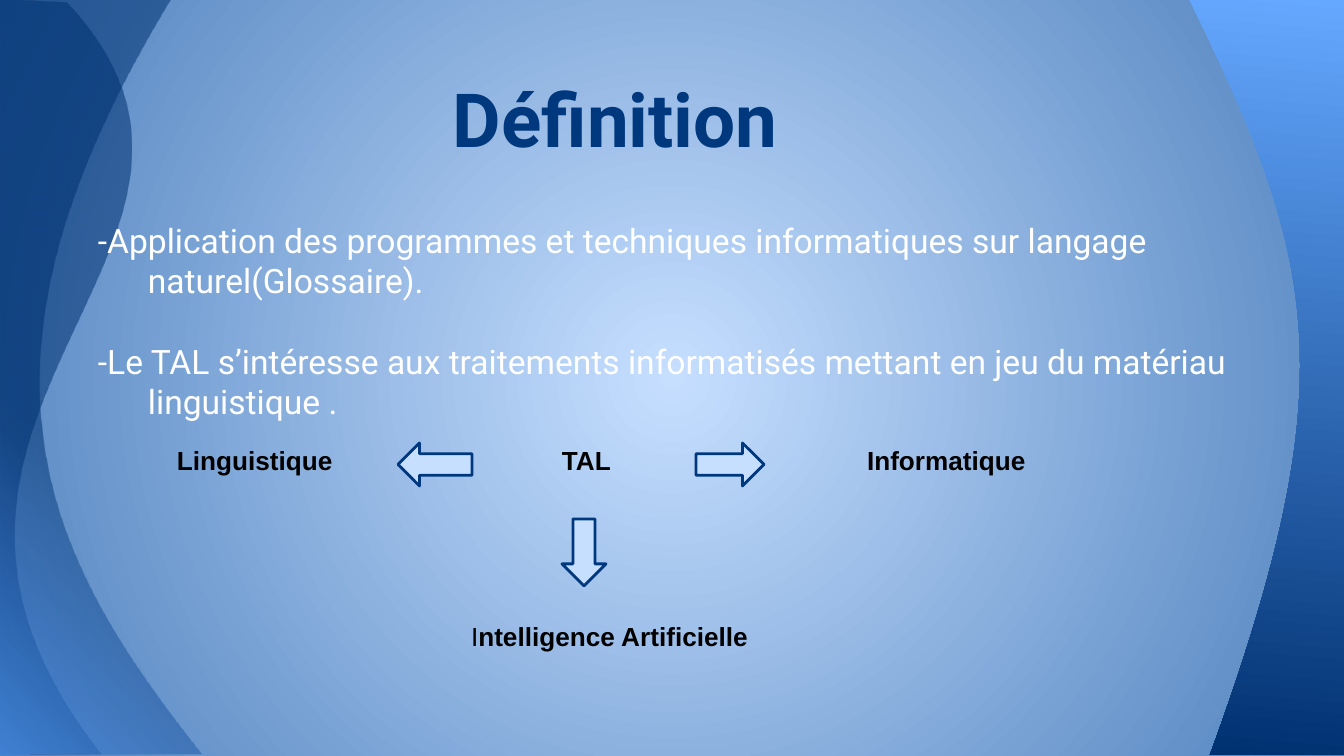
from lxml.etree import SubElement
from pptx import Presentation
from pptx.dml.color import RGBColor
from pptx.enum.shapes import MSO_SHAPE
from pptx.enum.text import MSO_ANCHOR
from pptx.oxml.ns import qn
from pptx.util import Pt

PX = 914400 / 134.4
WIDTH, HEIGHT = 1344, 756
INSET = 13
NAVY, PALE, WHITE, BLACK = "00387E", "C6DFFF", "FFFFFF", "000000"

TITLE = "Définition"
DEFINITIONS = [
    "-Application des programmes et techniques informatiques sur langage naturel(Glossaire).",
    "-Le TAL s’intéresse aux traitements informatisés mettant en jeu du matériau linguistique .",
]
# (runs as (text, bold), box, indent)
LABELS = [
    ([("Linguistique", True)], (164, 431, 204, 67), 0),
    ([("Informatique", True)], (854, 431, 204, 67), 0),
    ([("TAL", True)], (542, 431, 109, 67), 7),
    ([("I", False), ("ntelligence Artificielle", True)], (458, 607, 364, 67), 0),
]
ARROWS = [
    (MSO_SHAPE.LEFT_ARROW, (398, 443, 74, 43)),
    (MSO_SHAPE.DOWN_ARROW, (562, 519, 44, 67)),
    (MSO_SHAPE.RIGHT_ARROW, (696, 443, 68, 43)),
]
BACKGROUND = dict(stops=[(0, PALE), (100, "4F81BD")], focus=(50, 50, 50, 50))
VEIL = dict(stops=[(0, "549FFF"), (41, "003171"), (100, "003171")],
            focus=(0, 100, 100, 0), opacity=54)
EDGE = dict(stops=[(0, "65A8FF"), (100, "003171")], angle=95)
# (Bézier curve, outer corners, gradient)
WAVES = [
    ([(171, 0), (-51, 366), (44, 555), (202, 754)], [(-1, 755), (-1, -3)], VEIL),
    ([(67, 3), (292, 245), (-164, 414), (101, 754)], [(1, 755), (1, 0)], VEIL),
    ([(1210, 755), (1346, 382), (1319, 263), (1189, -1)], [(1351, -1), (1351, 755)], EDGE),
]


def px(length):
    return round(length * PX)


def color(hex_code):
    return RGBColor.from_string(hex_code)


def set_gradient(fill, properties, stops, focus=None, angle=0, opacity=100):
    """Fill with a circle around focus (left, top, right, bottom in %), else a line at angle."""
    fill.solid()
    solid = properties.find(qn("a:solidFill"))
    gradient = properties.makeelement(qn("a:gradFill"), {"rotWithShape": "1"})
    properties.replace(solid, gradient)
    stop_list = SubElement(gradient, qn("a:gsLst"))
    for position, hex_code in stops:
        stop = SubElement(stop_list, qn("a:gs"), pos=str(position * 1000))
        tint = SubElement(stop, qn("a:srgbClr"), val=hex_code)
        if opacity < 100:
            SubElement(tint, qn("a:alpha"), val=str(opacity * 1000))
    if focus:
        circle = SubElement(gradient, qn("a:path"), path="circle")
        sides = {side: str(value * 1000) for side, value in zip("ltrb", focus)}
        SubElement(circle, qn("a:fillToRect"), sides)
    else:
        SubElement(gradient, qn("a:lin"), ang=str(angle * 60000), scaled="0")


def bend_first_side(outline):
    """Turn the first three lines of a freeform into one Bézier curve."""
    lines = list(outline.iter(qn("a:lnTo")))[:3]
    bend = outline.makeelement(qn("a:cubicBezTo"), {})
    lines[0].addprevious(bend)
    for line in lines:
        bend.append(line[0])
        line.getparent().remove(line)


def add_wave(slide, curve, corners, gradient):
    start, *rest = curve + corners
    builder = slide.shapes.build_freeform(*start, scale=PX)
    builder.add_line_segments(rest, close=True)
    wave = builder.convert_to_shape()
    bend_first_side(wave._element.spPr)
    wave.shadow.inherit = False
    wave.line.fill.background()
    set_gradient(wave.fill, wave._element.spPr, **gradient)


def add_text(slide, paragraphs, box, *, size, font, hex_code, margin=0, indent=0,
             gap=0, top_inset=INSET, anchor=MSO_ANCHOR.TOP):
    """Add a text box; each paragraph is a list of (text, bold) runs."""
    frame = slide.shapes.add_textbox(*map(px, box)).text_frame
    frame.word_wrap = True
    frame.vertical_anchor = anchor
    frame.margin_left = frame.margin_right = frame.margin_bottom = px(INSET)
    frame.margin_top = px(top_inset)
    for index, runs in enumerate(paragraphs):
        paragraph = frame.paragraphs[0] if index == 0 else frame.add_paragraph()
        paragraph.space_before = Pt(gap if index else 0)
        properties = paragraph._p.get_or_add_pPr()
        properties.set("marL", str(px(margin)))
        properties.set("indent", str(px(indent)))
        for text, bold in runs:
            run = paragraph.add_run()
            run.text = text
            run.font.size, run.font.name, run.font.bold = Pt(size), font, bold
            run.font.color.rgb = color(hex_code)


def add_arrow(slide, kind, box):
    arrow = slide.shapes.add_shape(kind, *map(px, box))
    arrow.shadow.inherit = False
    arrow.fill.solid()
    arrow.fill.fore_color.rgb = color(PALE)
    arrow.line.color.rgb = color(NAVY)
    arrow.line.width = Pt(1.5)


def main():
    presentation = Presentation()
    presentation.slide_width, presentation.slide_height = px(WIDTH), px(HEIGHT)
    slide = presentation.slides.add_slide(presentation.slide_layouts[6])

    background_fill = slide.background.fill
    set_gradient(background_fill, slide._element.find(".//" + qn("p:bgPr")), **BACKGROUND)
    for curve, corners, gradient in WAVES:
        add_wave(slide, curve, corners, gradient)

    add_text(slide, [[(text, False)] for text in DEFINITIONS], (67, 167, 1210, 550),
             size=18, font="Roboto", hex_code=WHITE, margin=68, indent=-50,
             gap=21.5, top_inset=INSET + 40)
    add_text(slide, [[(TITLE, True)]], (67, 29, 1210, 146), size=40, font="Roboto",
             hex_code=NAVY, indent=373, anchor=MSO_ANCHOR.BOTTOM)
    for runs, box, indent in LABELS:
        add_text(slide, [runs], box, size=14, font="Arial", hex_code=BLACK, indent=indent)
    for kind, box in ARROWS:
        add_arrow(slide, kind, box)

    presentation.save("out.pptx")


if __name__ == "__main__":
    main()
